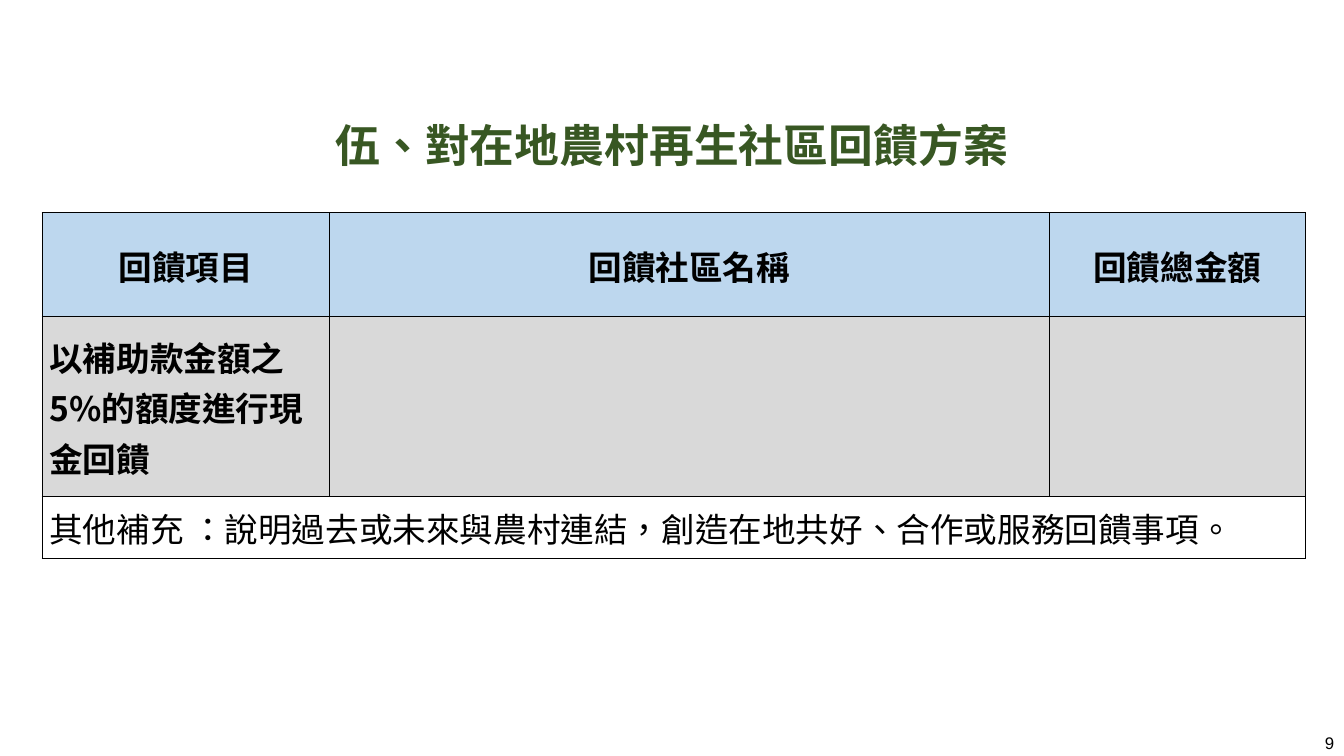
from lxml import etree
from pptx import Presentation
from pptx.dml.color import RGBColor
from pptx.enum import lang, text
from pptx.oxml import ns
from pptx.util import Pt

BLACK = RGBColor(0x00, 0x00, 0x00)
GREEN = RGBColor(0x38, 0x57, 0x23)
BLUE = RGBColor(0xBD, 0xD7, 0xEE)
GREY = RGBColor(0xD9, 0xD9, 0xD9)
CJK = "Noto Sans CJK SC"
LEFT, CENTER, RIGHT = text.PP_ALIGN.LEFT, text.PP_ALIGN.CENTER, text.PP_ALIGN.RIGHT
MIDDLE = text.MSO_ANCHOR.MIDDLE
COLS = (205.2, 514.1, 182.9)
ROWS = (74.2, 128.2, 44.6)
HEADS = ("回饋項目", "回饋社區名稱", "回饋總金額")


def write(tf, words, size, align=CENTER, color=BLACK, name="Arial", bold=False):
    """Write one run with Latin and East Asian fonts."""
    p = tf.paragraphs[0]
    p.alignment = align
    r = p.add_run()
    r.text = words
    fmt = {"size": Pt(size), "name": name, "bold": bold,
           "language_id": lang.MSO_LANGUAGE_ID.TRADITIONAL_CHINESE}
    for key, value in fmt.items():
        setattr(r.font, key, value)
    r.font.color.rgb = color
    etree.SubElement(r.font._element, ns.qn("a:ea"), typeface=CJK)
    return p


def add_label(s, box, words, size, **style):
    """Place a wrapped, vertically centred text box."""
    tf = s.shapes.add_textbox(*map(Pt, box)).text_frame
    tf.word_wrap = True
    tf.vertical_anchor = MIDDLE
    write(tf, words, size, **style)


def add_borders(cell):
    """Draw a thin black line on all sides of a cell."""
    tc_pr = cell._tc.get_or_add_tcPr()
    for i, side in enumerate(("lnL", "lnR", "lnT", "lnB")):
        ln = etree.Element(ns.qn(f"a:{side}"), w=str(Pt(1)))
        fill = etree.SubElement(ln, ns.qn("a:solidFill"))
        etree.SubElement(fill, ns.qn("a:srgbClr"), val=str(BLACK))
        tc_pr.insert(i, ln)


def fill_cell(cell, words, **style):
    """Write a table cell with fixed line spacing."""
    p = write(cell.text_frame, words, 24, **style)
    p.line_spacing = Pt(36)


def add_feedback_table(s, left, top):
    """Build the feedback table from its top left corner."""
    box = (left, top, sum(COLS), sum(ROWS))
    table = s.shapes.add_table(len(ROWS), len(COLS), *map(Pt, box)).table
    for col, width in zip(table.columns, COLS):
        col.width = Pt(width)
    for row, height, color in zip(table.rows, ROWS, (BLUE, GREY, None)):
        row.height = Pt(height)
        for cell in row.cells:
            fmt = {"margin_left": Pt(5), "margin_right": Pt(5), "margin_top": 0,
                   "margin_bottom": 0, "vertical_anchor": MIDDLE}
            for key, value in fmt.items():
                setattr(cell, key, value)
            if color is None:
                cell.fill.background()
            else:
                cell.fill.solid()
                cell.fill.fore_color.rgb = color
            add_borders(cell)
    for i, head in enumerate(HEADS):
        fill_cell(table.cell(0, i), head, bold=True)
    fill_cell(table.cell(1, 0), "以補助款金額之5%的額度進行現金回饋",
              align=LEFT, name=CJK, bold=True)
    table.cell(2, 0).merge(table.cell(2, 2))
    fill_cell(table.cell(2, 0),
              "其他補充 ：說明過去或未來與農村連結，創造在地共好、合作或服務回饋事項。",
              align=LEFT)


def main():
    """Build and save the slide."""
    prs = Presentation()
    prs.slide_width, prs.slide_height = Pt(960), Pt(540)
    s = prs.slides.add_slide(prs.slide_layouts[6])
    add_label(s, (744, 520.6, 216, 19.4), "9", 12, align=RIGHT)
    add_label(s, (0, 80.6, 960, 46), "伍、對在地農村再生社區回饋方案", 32,
              color=GREEN, name=CJK, bold=True)
    add_feedback_table(s, 30.2, 152)
    prs.save("out.pptx")


if __name__ == "__main__":
    main()
